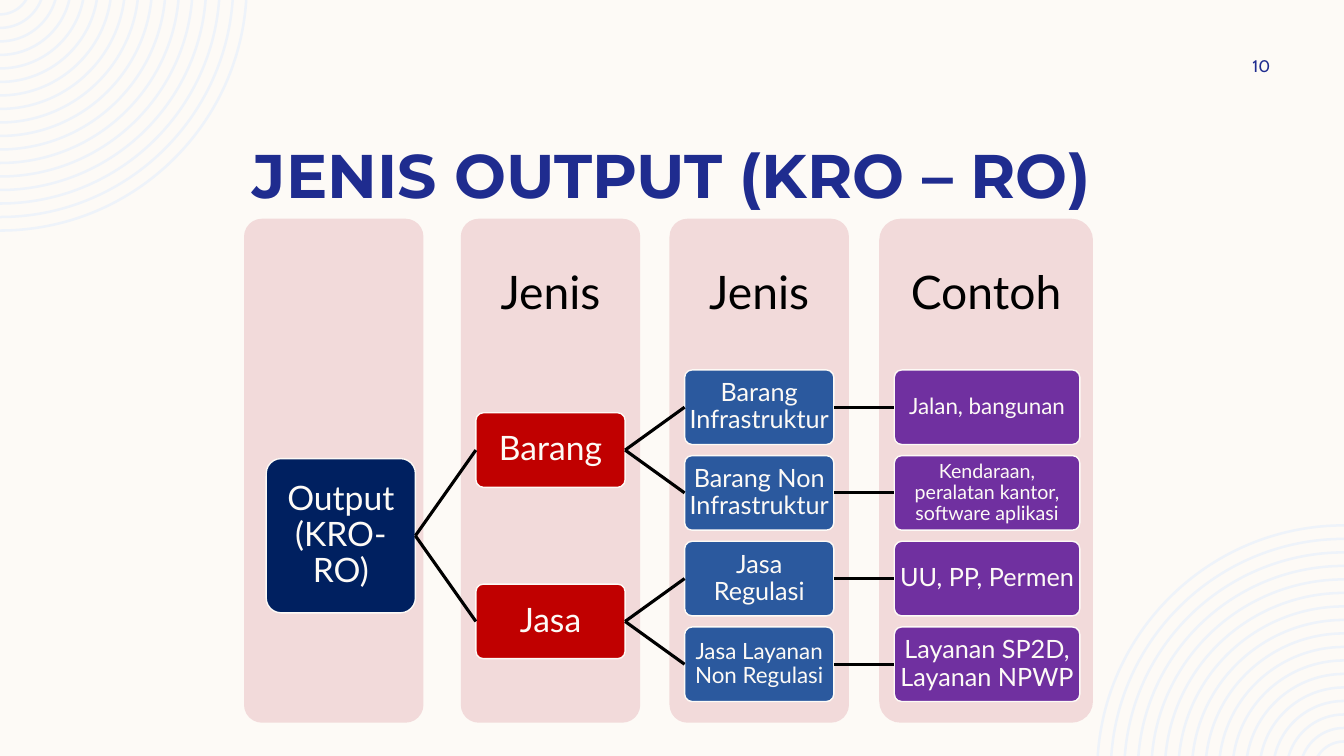
import math
from pptx import Presentation
from pptx.dml.color import RGBColor
from pptx.enum.shapes import MSO_CONNECTOR, MSO_SHAPE
from pptx.enum.text import MSO_ANCHOR, PP_ALIGN
from pptx.oxml.ns import qn
from pptx.util import Inches, Pt

CENTER, MIDDLE = PP_ALIGN.CENTER, MSO_ANCHOR.MIDDLE
ROUNDED, STRAIGHT = MSO_SHAPE.ROUNDED_RECTANGLE, MSO_CONNECTOR.STRAIGHT
LEFT_SITE, RIGHT_SITE = 1, 3

COLORS = {"cream": "FDFAF6", "ring": "EEF3FA", "title": "1F2C8F",
          "panel": "F2DADA", "black": "000000", "navy": "002060",
          "red": "C00000", "blue": "2B599E", "purple": "7030A0"}
SLIDE_W, SLIDE_H = 13.33, 7.5

# One entry per column: panel box, heading, and the nodes placed in it
COLUMNS = [
    dict(left=2.42, width=1.78, head="", indent=0.22, node_w=1.48, node_h=1.53,
         fill="navy", margin=0.04),
    dict(left=4.57, width=1.78, head="Jenis", indent=0.15, node_w=1.48, node_h=0.74,
         fill="red", margin=0.02),
    dict(left=6.64, width=1.78, head="Jenis", indent=0.15, node_w=1.48, node_h=0.74,
         fill="blue", margin=0.01),
    dict(left=8.72, width=2.12, head="Contoh", indent=0.15, node_w=1.84, node_h=0.74,
         fill="purple", margin=0.01),
]
PANEL_TOP, PANEL_H, HEAD_H = 2.17, 5, 1.5
FIRST_LEAF, LEAF_STEP = 4.04, 0.85

# Node: text, font size, children
TREE = ("Output (KRO-RO)", 24, [
    ("Barang", 24, [
        ("Barang Infrastruktur", 18, [("Jalan, bangunan", 16, [])]),
        ("Barang Non Infrastruktur", 18,
         [("Kendaraan, peralatan kantor, software aplikasi", 14, [])]),
    ]),
    ("Jasa", 24, [
        ("Jasa Regulasi", 18, [("UU, PP, Permen", 18, [])]),
        ("Jasa Layanan Non Regulasi", 16, [("Layanan SP2D, Layanan NPWP", 18, [])]),
    ]),
])


def rgb(name):
    return RGBColor.from_string(COLORS[name])


def set_text(shape, text, size, font, color, margin, spacing=0.9, bold=False):
    tf = shape.text_frame
    frame = dict(word_wrap=True, vertical_anchor=MIDDLE)
    frame.update({f"margin_{side}": Inches(margin)
                  for side in ("left", "top", "right", "bottom")})
    for key, value in frame.items():
        setattr(tf, key, value)
    p = tf.paragraphs[0]
    p.alignment, p.line_spacing = CENTER, spacing
    r = p.add_run()
    r.text = text
    for key, value in dict(size=Pt(size), name=font, bold=bold).items():
        setattr(r.font, key, value)
    r.font.color.rgb = rgb(color)


def set_fill(sp, color):
    sp.shadow.inherit = False
    sp.fill.solid()
    sp.fill.fore_color.rgb = rgb(color)
    sp.line.fill.background()


def add_box(s, left, top, width, height, fill, line=None):
    sp = s.shapes.add_shape(ROUNDED, *map(Inches, (left, top, width, height)))
    sp.adjustments[0] = 0.1
    set_fill(sp, fill)
    if line:
        sp.line.color.rgb = rgb(line)
        sp.line.width = Pt(1)
    return sp


def add_textbox(s, left, top, width, height, *args):
    set_text(s.shapes.add_textbox(*map(Inches, (left, top, width, height))), *args)


def curve(lines):
    """Turn three line segments into one cubic curve."""
    bezier = lines[0].makeelement(qn("a:cubicBezTo"), {})
    lines[0].addprevious(bezier)
    for line in lines:
        bezier.append(line[0])
        line.getparent().remove(line)


def add_rings(s, corner_x, corner_y, direction):
    """Concentric quarter rings that fan out from a slide corner."""
    count, outer, step, thickness, offset = 17, 2.46, 0.134, 0.025, 0.16

    def arc(radius):
        start = math.asin(offset / radius)
        handle = radius * 4 / 3 * math.tan((math.pi / 2 - start) / 4)
        cos, sin = math.cos(start), math.sin(start)
        points = [(radius * cos, radius * sin),
                  (radius * cos - handle * sin, radius * sin + handle * cos),
                  (handle, radius), (0, radius)]
        return [(Inches(corner_x + direction * x),
                 Inches(corner_y + direction * (y - offset))) for x, y in points]

    fb = None
    for i in range(count):
        radius = outer - i * step
        points = arc(radius) + arc(radius - thickness)[::-1]
        if fb is None:
            fb = s.shapes.build_freeform(*points[0])
        else:
            fb.move_to(*points[0])
        fb.add_line_segments(points[1:], close=True)
    sp = fb.convert_to_shape()
    set_fill(sp, "ring")

    # Each ring has seven segments: outer arc, straight edge, inner arc
    lines = list(sp._element.iter(qn("a:lnTo")))
    for i in range(0, len(lines), 7):
        curve(lines[i:i + 3])
        curve(lines[i + 4:i + 7])


def add_panel(s, col):
    add_box(s, col["left"], PANEL_TOP, col["width"], PANEL_H, "panel")
    if col["head"]:
        add_textbox(s, col["left"], PANEL_TOP, col["width"], HEAD_H,
                    col["head"], 33, "Lato", "black", 0.26)


def link(s, parent, child):
    cn = s.shapes.add_connector(STRAIGHT, 0, 0, 0, 0)
    cn.begin_connect(parent, RIGHT_SITE)
    cn.end_connect(child, LEFT_SITE)
    cn.line.color.rgb = rgb("black")
    cn.line.width = Pt(2.25)
    sp_pr = cn._element.spPr
    sp_pr.append(sp_pr.makeelement(qn("a:effectLst"), {}))


def add_branch(s, node, rows, level=0):
    """Draw a node centred on its children; return its shape and centre."""
    text, size, children = node
    branches = [add_branch(s, child, rows, level + 1) for child in children]
    if branches:
        middle = sum(y for _, y in branches) / len(branches)
    else:
        middle = next(rows)
    col = COLUMNS[level]
    sp = add_box(s, col["left"] + col["indent"], middle - col["node_h"] / 2,
                 col["node_w"], col["node_h"], col["fill"], "cream")
    set_text(sp, text, size, "Lato", "cream", col["margin"])
    for child, _ in branches:
        link(s, sp, child)
    return sp, middle


def add_title(s, left, top, width, height):
    title = s.shapes.title
    title.left, title.top, title.width, title.height = map(
        Inches, (left, top, width, height))
    set_text(title, "JENIS OUTPUT (KRO – RO)", 44, "Montserrat", "title",
             0.05, Pt(48.8), True)


def main():
    prs = Presentation()
    prs.slide_width, prs.slide_height = Inches(SLIDE_W), Inches(SLIDE_H)
    s = prs.slides.add_slide(prs.slide_layouts[5])
    s.background.fill.solid()
    s.background.fill.fore_color.rgb = rgb("cream")

    # Corner decoration
    add_rings(s, 0, 0, 1)
    add_rings(s, SLIDE_W, SLIDE_H, -1)

    # Title and page number
    add_title(s, 0.83, 1.33, 11.67, 0.84)
    add_textbox(s, 11.97, 0.5, 1.08, 0.3, "10", 12, "Cabin", "title", 0.05, 1.0)

    # Column panels and the tree across them
    for col in COLUMNS:
        add_panel(s, col)
    add_branch(s, TREE, iter([FIRST_LEAF + i * LEAF_STEP for i in range(4)]))

    prs.save("out.pptx")


if __name__ == "__main__":
    main()
